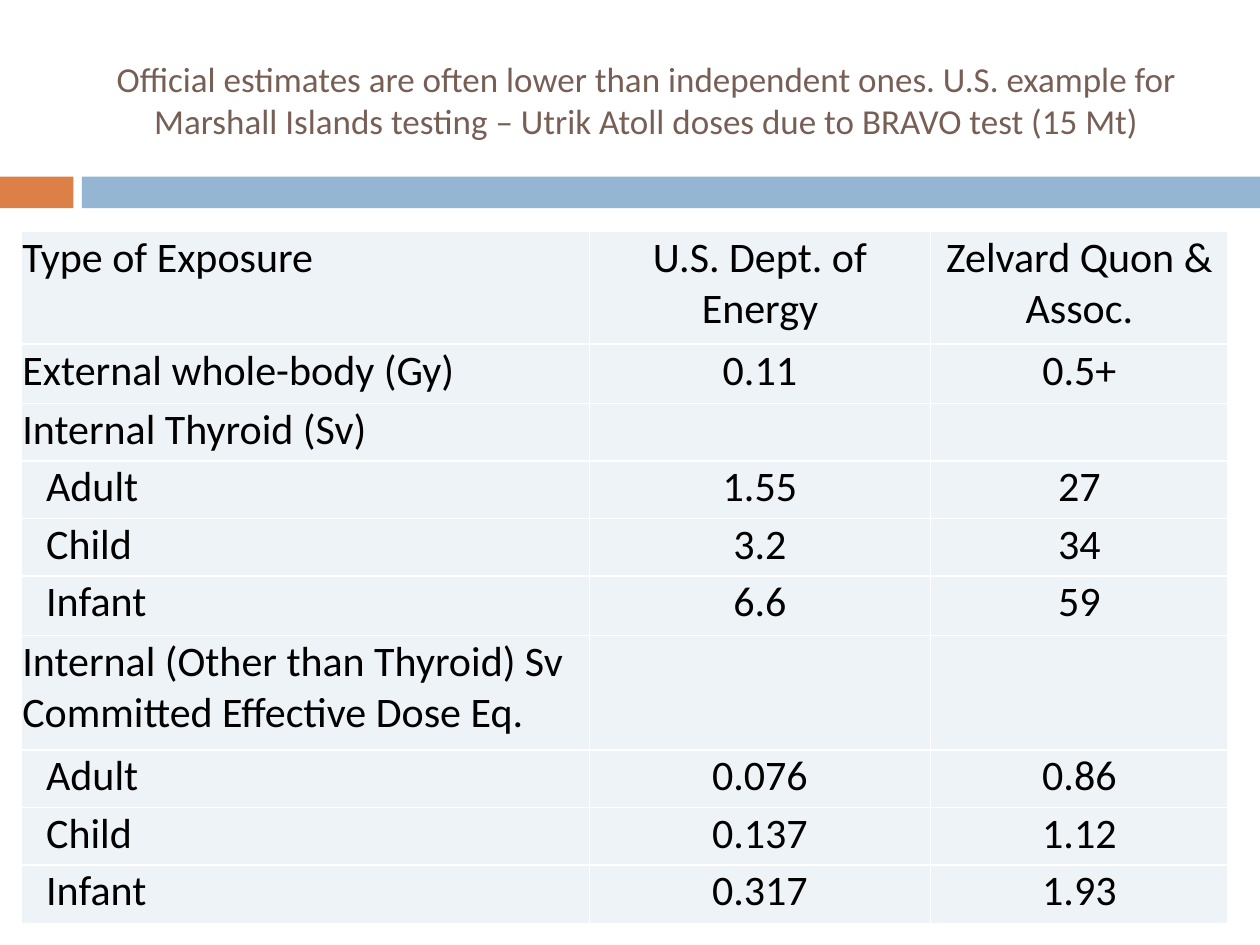
from lxml.etree import SubElement
from pptx import Presentation
from pptx.dml.color import RGBColor
from pptx.enum.shapes import MSO_SHAPE
from pptx.enum.text import MSO_ANCHOR, PP_ALIGN
from pptx.oxml.ns import qn
from pptx.util import Cm, Pt

HUES = {"title": "775F55", "accent": "DD8047", "band": "94B6D2",
        "cell": "EEF3F7", "ink": "000000", "rule": "FFFFFF"}


def hue(name):
    return RGBColor.from_string(HUES[name])


def write(frame, text, size=24, color="ink", align=PP_ALIGN.LEFT):
    para = frame.paragraphs[0]
    para.alignment = align
    run = para.add_run()
    run.text = text
    run.font.name = "Calibri"
    run.font.size = Pt(size)
    run.font.bold = False
    run.font.color.rgb = hue(color)


deck = Presentation()
deck.slide_width, deck.slide_height = Cm(25.4), Cm(19.05)
slide = deck.slides.add_slide(deck.slide_layouts[5])

for left, width, color in [(0, 1.48, "accent"), (1.65, 23.75, "band")]:
    bar = slide.shapes.add_shape(
        MSO_SHAPE.RECTANGLE, Cm(left), Cm(3.56), Cm(width), Cm(0.64))
    bar.shadow.inherit = False
    bar.fill.solid()
    bar.fill.fore_color.rgb = hue(color)
    bar.line.fill.background()

title = slide.shapes.title
title.left, title.top = Cm(1.7), Cm(0.64)
title.width, title.height = Cm(22.66), Cm(2.74)
title.text_frame.word_wrap = True
title.text_frame.vertical_anchor = MSO_ANCHOR.MIDDLE
write(title.text_frame,
      "Official estimates are often lower than independent ones. "
      "U.S. example for Marshall Islands testing – Utrik Atoll doses "
      "due to BRAVO test (15 Mt)",
      size=20, color="title", align=PP_ALIGN.CENTER)

ages = ["Adult", "Child", "Infant"]
rows = [
    ("Type of Exposure", "U.S. Dept. of Energy", "Zelvard Quon & Assoc."),
    ("External whole-body (Gy)", "0.11", "0.5+"),
    ("Internal Thyroid (Sv)", "", ""),
    *zip(ages, ["1.55", "3.2", "6.6"], ["27", "34", "59"]),
    ("Internal (Other than Thyroid) Sv Committed Effective Dose Eq.", "", ""),
    *zip(ages, ["0.076", "0.137", "0.317"], ["0.86", "1.12", "1.93"]),
]
wide = [11.45, 6.88, 6.0]
high = [2.28, 1.19, 1.16, 1.16, 1.16, 1.2, 2.31, 1.16, 1.16, 1.19]

table = slide.shapes.add_table(
    len(rows), len(wide), Cm(0.43), Cm(4.66),
    Cm(sum(wide)), Cm(sum(high))).table
table.first_row = table.horz_banding = False
for col, width in zip(table.columns, wide):
    col.width = Cm(width)
for row, height in zip(table.rows, high):
    row.height = Cm(height)

for r, texts in enumerate(rows):
    for c, text in enumerate(texts):
        cell = table.cell(r, c)
        cell.margin_left = Cm(0.5 if text in ages else 0.02)
        cell.margin_right = cell.margin_top = Cm(0.02)
        cell.margin_bottom = 0
        props = cell._tc.get_or_add_tcPr()
        for side in ("lnL", "lnR", "lnT", "lnB"):
            edge = SubElement(props, qn(f"a:{side}"), w=str(Pt(1)))
            fill = SubElement(edge, qn("a:solidFill"))
            SubElement(fill, qn("a:srgbClr"), val=HUES["rule"])
        cell.fill.solid()
        cell.fill.fore_color.rgb = hue("cell")
        if text:
            write(cell.text_frame, text,
                  align=PP_ALIGN.CENTER if c else PP_ALIGN.LEFT)

deck.save("out.pptx")
